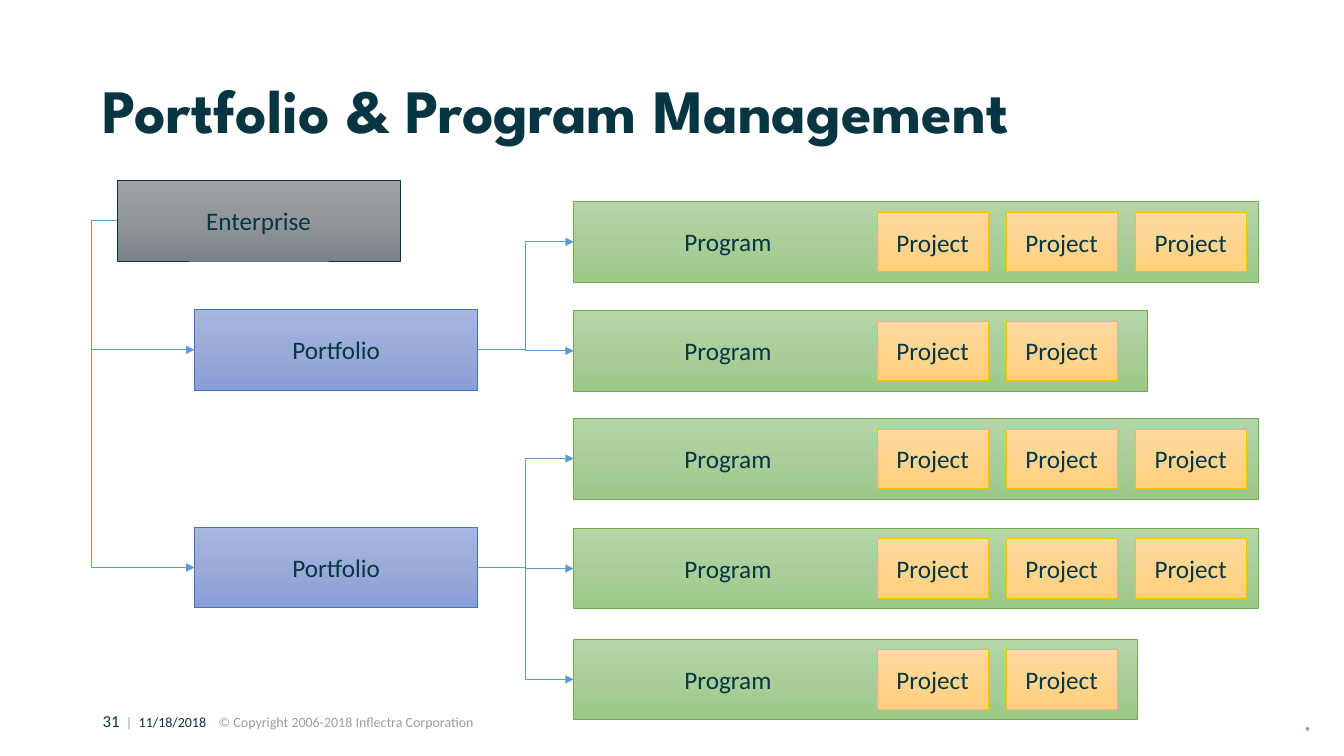
"""Build the Portfolio & Program Management slide."""
from copy import deepcopy
from dataclasses import dataclass

from pptx import Presentation
from pptx.dml.color import RGBColor
from pptx.enum import shapes, text
from pptx.oxml import ns
from pptx.oxml import xmlchemy as xml
from pptx.util import Inches, Pt

TITLE = "Portfolio & Program Management"
PORTFOLIOS = [
    {"top": 3.07, "programs": [(2.0, 6.79, 3), (3.08, 5.69, 2)]},
    {"top": 5.23, "programs": [(4.15, 6.79, 3), (5.24, 6.79, 3), (6.34, 5.59, 2)]},
]
FOOTER = [
    ("31", 12, "073642"),
    ("  |  ", 10, "93A1A1"),
    ("11/18/2018  ", 10, "073642"),
    ("  © Copyright 2006-2018 Inflectra Corporation", 10, "93A1A1"),
]
BOX_WIDTH, BOX_HEIGHT = 2.81, 0.8
PROJECT_LEFT, PROJECT_STEP = 8.7, 1.28
PROJECT_WIDTH, PROJECT_HEIGHT = 1.1, 0.59
LEFT_SITE, RIGHT_SITE = 1, 3


@dataclass(frozen=True)
class Theme:
    """Fonts, sizes and colours; each box style is its gradient and its outline."""
    ink: str = "073642"
    connector: str = "5B9BD5"
    enterprise: tuple = ("9DA2A5", "909699", "7C8388", "073642")
    portfolio: tuple = ("A8B7DF", "9AABD9", "889ED7", "4472C4")
    program: tuple = ("B5D5A7", "AACE9A", "9CC987", "70AD47")
    project: tuple = ("FFDB9E", "FFD590", "FFD07C", "FFC000")
    heading_font: str = "League Spartan"
    body_font: str = "Calibri"
    heading_size: int = 44
    label_size: int = 18
    mark_size: int = 14
    line_width: float = 0.5


THEME = Theme()


def set_font(font, size, color=THEME.ink, name=THEME.body_font):
    """Apply size, colour and typeface."""
    font.size, font.name = Pt(size), name
    font.color.rgb = RGBColor.from_string(color)


def place(left, top, width, height):
    """Convert a rectangle from inches."""
    return [Inches(value) for value in (left, top, width, height)]


def add_box(page, label, area, style, indent=None):
    """Add a gradient rectangle with a centred or indented label."""
    box = page.shapes.add_shape(shapes.MSO_SHAPE.RECTANGLE, *place(*area))
    box.shadow.inherit = False
    *colors, outline = style
    box.fill.gradient()
    box.fill.gradient_angle = 270
    stop_list = box._element.spPr.find(".//" + ns.qn("a:gsLst"))
    stop_list.insert(1, deepcopy(stop_list[0]))
    for stop, color, position in zip(box.fill.gradient_stops, colors, (0, 0.5, 1)):
        stop.color.rgb = RGBColor.from_string(color)
        stop.position = position
    box.line.color.rgb = RGBColor.from_string(outline)
    box.line.width = Pt(THEME.line_width)
    frame = box.text_frame
    frame.vertical_anchor = text.MSO_ANCHOR.MIDDLE
    para = frame.paragraphs[0]
    para.text = label
    para.alignment = text.PP_ALIGN.CENTER
    if indent:
        para.alignment = text.PP_ALIGN.LEFT
        para._p.get_or_add_pPr().set("marL", str(Inches(indent)))
    set_font(para.font, THEME.label_size)
    return box


def add_arrow(page, source, source_site, target, bend=None):
    """Join two boxes with an elbow arrow ending on the target's left side."""
    arrow = page.shapes.add_connector(shapes.MSO_CONNECTOR.ELBOW, 0, 0, 0, 0)
    arrow.begin_connect(source, source_site)
    arrow.end_connect(target, LEFT_SITE)
    arrow.line.color.rgb = RGBColor.from_string(THEME.connector)
    arrow.line.width = Pt(THEME.line_width)
    properties = arrow._element.spPr
    head = xml.OxmlElement("a:tailEnd")
    head.set("type", "triangle")
    properties.find(ns.qn("a:ln")).append(head)
    properties.append(xml.OxmlElement("a:effectLst"))
    if bend is not None:
        guide = xml.OxmlElement("a:gd")
        guide.set("name", "adj1")
        guide.set("fmla", f"val {round(bend * 100000)}")
        properties.find(".//" + ns.qn("a:avLst")).append(guide)


def add_title(page):
    """Fill and format the title placeholder."""
    title = page.shapes.title
    title.left, title.top, title.width, title.height = place(0.92, 0.4, 11.5, 1.45)
    frame = title.text_frame
    frame.text = TITLE
    frame.auto_size = text.MSO_AUTO_SIZE.NONE
    frame.vertical_anchor = text.MSO_ANCHOR.MIDDLE
    para = frame.paragraphs[0]
    para.alignment = text.PP_ALIGN.LEFT
    para.line_spacing = 0.9
    set_font(para.font, THEME.heading_size, name=THEME.heading_font)
    para.font.bold = True


def add_footer(page):
    """Add the footer line and the registered mark."""
    footer = page.shapes.add_textbox(*place(0.92, 7, 7.47, 0.3)).text_frame
    footer.word_wrap = True
    for words, size, color in FOOTER:
        span = footer.paragraphs[0].add_run()
        span.text = words
        set_font(span.font, size, color)
    mark = page.shapes.add_textbox(*place(12.95, 7.16, 0.18, 0.24)).text_frame
    mark.margin_left = mark.margin_right = mark.margin_top = mark.margin_bottom = 0
    span = mark.paragraphs[0].add_run()
    span.text = "®"
    set_font(span.font, THEME.mark_size)
    span.font._element.set("baseline", "30000")


def add_chart_boxes(page):
    """Draw the enterprise, its portfolios, their programs and projects."""
    enterprise = add_box(page, "Enterprise", (1.16, 1.79, BOX_WIDTH, BOX_HEIGHT), THEME.enterprise)
    for group in PORTFOLIOS:
        area = (1.93, group["top"], BOX_WIDTH, BOX_HEIGHT)
        portfolio = add_box(page, "Portfolio", area, THEME.portfolio)
        add_arrow(page, enterprise, LEFT_SITE, portfolio, bend=-0.324)
        for top, width, projects in group["programs"]:
            area = (5.69, top, width, BOX_HEIGHT)
            program = add_box(page, "Program", area, THEME.program, indent=1)
            add_arrow(page, portfolio, RIGHT_SITE, program)
            project_top = top + (BOX_HEIGHT - PROJECT_HEIGHT) / 2
            for index in range(projects):
                left = PROJECT_LEFT + index * PROJECT_STEP
                area = (left, project_top, PROJECT_WIDTH, PROJECT_HEIGHT)
                add_box(page, "Project", area, THEME.project)


def main():
    """Assemble and save the deck."""
    deck = Presentation()
    deck.slide_width, deck.slide_height = Inches(13.33), Inches(7.5)
    page = deck.slides.add_slide(deck.slide_layouts.get_by_name("Title Only"))
    add_footer(page)
    add_title(page)
    add_chart_boxes(page)
    deck.save("out.pptx")


if __name__ == "__main__":
    main()
